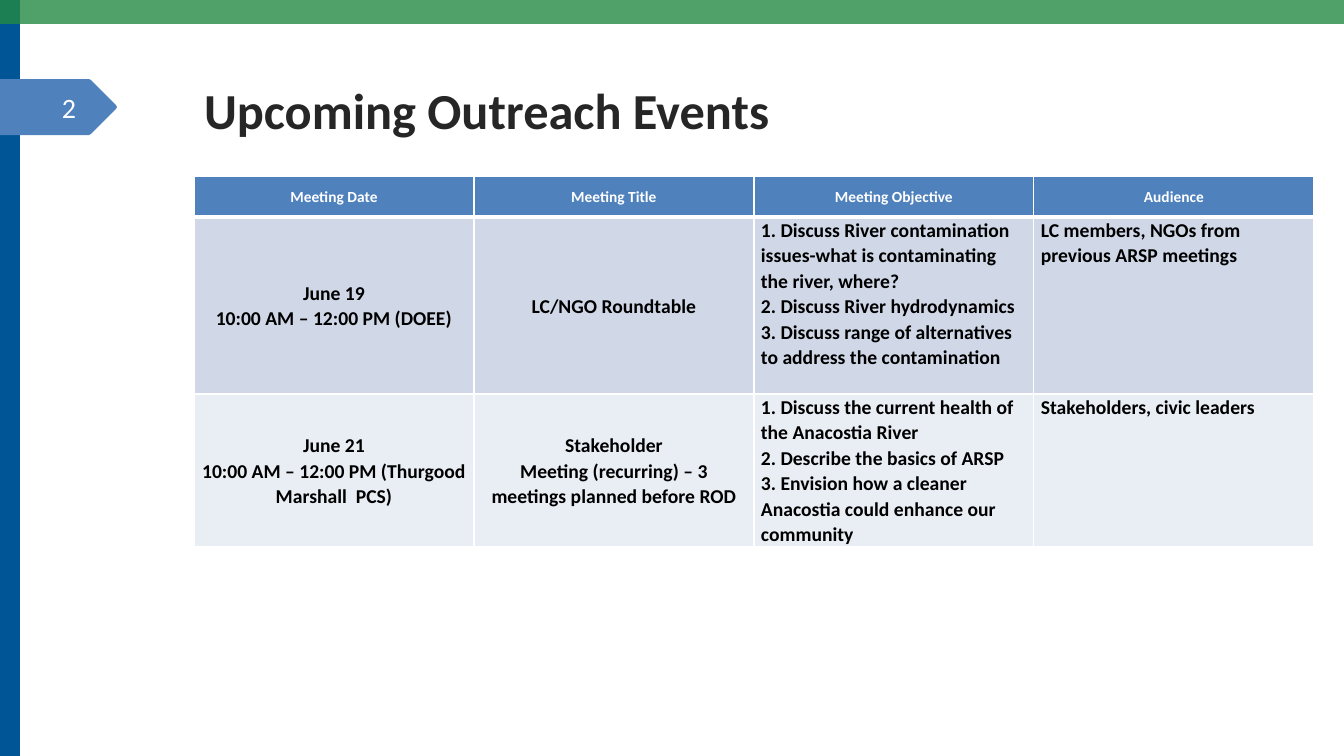
from lxml.etree import SubElement
from pptx import Presentation
from pptx.dml.color import RGBColor
from pptx.enum.shapes import MSO_SHAPE as Shape
from pptx.enum.text import MSO_ANCHOR as Anchor, PP_ALIGN as Align
from pptx.oxml import parse_xml
from pptx.oxml.ns import nsdecls, qn
from pptx.util import Pt

# Content
TITLE = "Upcoming Outreach Events"
PAGE_NUMBER = "2"
HEADERS = ["Meeting Date", "Meeting Title", "Meeting Objective", "Audience"]
EVENTS = [
    [
        ["June 19", "10:00 AM – 12:00 PM (DOEE)"],
        ["LC/NGO Roundtable"],
        [
            "1. Discuss River contamination issues-what is contaminating the river, where?",
            "2. Discuss River hydrodynamics",
            "3. Discuss range of alternatives to address the contamination",
        ],
        ["LC members, NGOs from previous ARSP meetings"],
    ],
    [
        ["June 21", "10:00 AM – 12:00 PM (Thurgood Marshall  PCS)"],
        ["Stakeholder", "Meeting (recurring) – 3 meetings planned before ROD"],
        [
            "1. Discuss the current health of the Anacostia River",
            "2. Describe the basics of ARSP",
            "3. Envision how a cleaner Anacostia could enhance our community",
        ],
        ["Stakeholders, civic leaders"],
    ],
]

# Layout in px
SLIDE_WIDTH, SLIDE_HEIGHT = 1344, 756
SIDE_BAR = (0, 0, 20, SLIDE_HEIGHT)
TOP_BAR = (0, 0, SLIDE_WIDTH, 24)
TITLE_BOX = (194, 69, 1120, 81)
NUMBER_BOX = (0, 87, 86, 40)
NUMBER_TAG = [(0, 79), (89, 79), (91, 80), (116, 105), (117, 107),
              (116, 109), (91, 134), (89, 135), (0, 135)]
TABLE_LEFT, TABLE_TOP, COLUMN_WIDTH = 194, 176, 280
ROW_HEIGHTS = [41, 177, 153]
CELL_MARGIN = 7

# Formats
BLUE, WHITE = "4F81BD", "FFFFFF"
ROW_FILLS = [BLUE, "D0D8E8", "E9EDF4"]
TITLE_FONT = {"name": "Calibri", "size": Pt(36), "bold": True}
NUMBER_FONT = {"name": "Calibri", "size": Pt(20), "bold": False}
HEADER_FONT = {"name": "Calibri", "size": Pt(11), "bold": True}
BODY_FONT = {"name": "Calibri", "size": Pt(14), "bold": True}


def px(value):
    return round(value * 914400 / 100.8)


def color(value):
    return RGBColor.from_string(value)


def paint(shape, fill):
    shape.shadow.inherit = False
    shape.fill.solid()
    shape.fill.fore_color.rgb = color(fill)
    shape.line.fill.background()


def add_bar(slide, box, fill):
    bar = slide.shapes.add_shape(Shape.RECTANGLE, *map(px, box))
    paint(bar, fill)
    return bar


def write(text_frame, lines, font, font_color, alignment, spacing=1.0):
    text_frame.text = "\n".join(lines)
    for paragraph in text_frame.paragraphs:
        paragraph.alignment = alignment
        paragraph.line_spacing = spacing
        for name, value in font.items():
            setattr(paragraph.font, name, value)
        paragraph.font.color.rgb = color(font_color)


def add_borders(cell, widths):
    properties = cell._tc.get_or_add_tcPr()
    for index, (side, width) in enumerate(widths.items()):
        properties.insert(index, parse_xml(
            f'<a:ln{side} {nsdecls("a")} w="{Pt(width)}"><a:solidFill>'
            f'<a:srgbClr val="{WHITE}"/></a:solidFill></a:ln{side}>'))


def add_events_table(slide):
    rows = [[[header] for header in HEADERS]] + EVENTS
    table = slide.shapes.add_table(
        len(rows), len(HEADERS), px(TABLE_LEFT), px(TABLE_TOP),
        px(COLUMN_WIDTH * len(HEADERS)), px(sum(ROW_HEIGHTS))).table
    for column in table.columns:
        column.width = px(COLUMN_WIDTH)
    for row_index, row in enumerate(rows):
        table.rows[row_index].height = px(ROW_HEIGHTS[row_index])
        is_header = row_index == 0
        borders = {"L": 1, "R": 1, "T": 3 if row_index == 1 else 1,
                   "B": 3 if is_header else 1}
        for column_index, lines in enumerate(row):
            cell = table.cell(row_index, column_index)
            centered = is_header or column_index < 2
            cell.margin_left = cell.margin_right = px(CELL_MARGIN)
            cell.margin_top = cell.margin_bottom = 0
            cell.vertical_anchor = Anchor.MIDDLE if centered else Anchor.TOP
            add_borders(cell, borders)
            cell.fill.solid()
            cell.fill.fore_color.rgb = color(ROW_FILLS[row_index])
            write(cell.text_frame, lines,
                  HEADER_FONT if is_header else BODY_FONT,
                  WHITE if is_header else "000000",
                  Align.CENTER if centered else Align.LEFT, 1.07)


def main():
    presentation = Presentation()
    presentation.slide_width = px(SLIDE_WIDTH)
    presentation.slide_height = px(SLIDE_HEIGHT)
    slide = presentation.slides.add_slide(presentation.slide_layouts[5])

    # Frame bars, the top one slightly transparent
    add_bar(slide, SIDE_BAR, "005596")
    top_bar = add_bar(slide, TOP_BAR, "238A44")
    top_color = top_bar.fill._xPr.find(qn("a:solidFill"))[0]
    SubElement(top_color, qn("a:alpha"), val="80000")

    # Page number tag
    builder = slide.shapes.build_freeform(*NUMBER_TAG[0], scale=px(1000) / 1000)
    builder.add_line_segments(NUMBER_TAG[1:], close=True)
    paint(builder.convert_to_shape(), BLUE)
    number = slide.shapes.add_textbox(*map(px, NUMBER_BOX)).text_frame
    number.word_wrap = True
    number.vertical_anchor = Anchor.MIDDLE
    write(number, [PAGE_NUMBER], NUMBER_FONT, "FEFFFF", Align.RIGHT)

    # Title
    title = slide.shapes.title
    title.left, title.top, title.width, title.height = map(px, TITLE_BOX)
    title.text_frame.vertical_anchor = Anchor.MIDDLE
    write(title.text_frame, [TITLE], TITLE_FONT, "262626", Align.LEFT)

    # Table
    add_events_table(slide)
    presentation.save("out.pptx")


if __name__ == "__main__":
    main()
